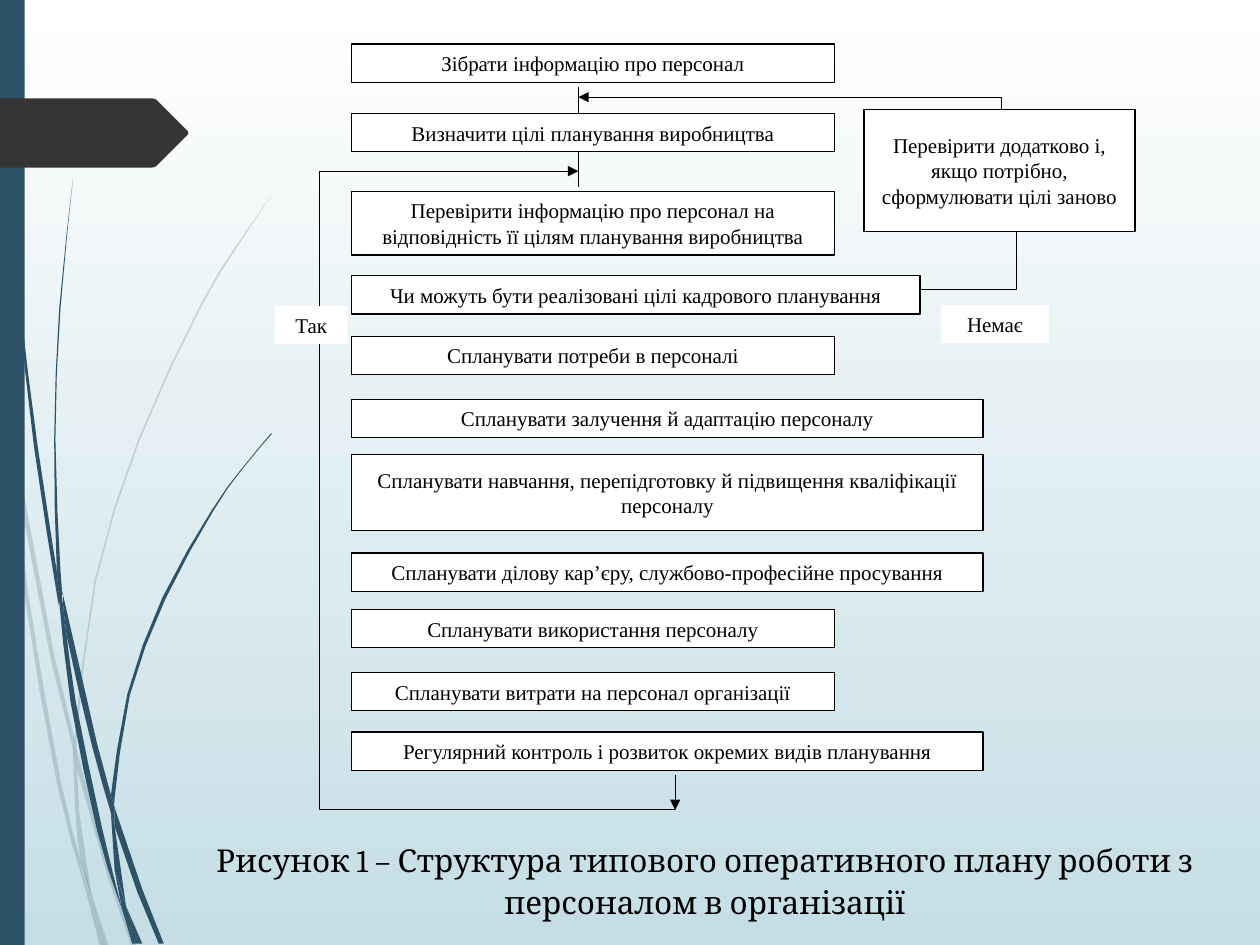
import lxml.etree
import pptx
import pptx.dml.color
import pptx.enum.shapes
import pptx.enum.text
import pptx.oxml.ns
import pptx.util

Cm = pptx.util.Cm
Pt = pptx.util.Pt
RGBColor = pptx.dml.color.RGBColor
qn = pptx.oxml.ns.qn
SHAPE = pptx.enum.shapes.MSO_SHAPE
CONNECTOR = pptx.enum.shapes.MSO_CONNECTOR

WHITE = RGBColor(0xFF, 0xFF, 0xFF)
BLACK = RGBColor(0x00, 0x00, 0x00)
PALE_BLUE = RGBColor(0xC5, 0xDE, 0xE5)
DARK_BLUE = RGBColor(0x2E, 0x53, 0x69)
CHARCOAL = RGBColor(0x35, 0x35, 0x35)

# Outlines are drawn on a grid of 1000 x 750 units over the slide
GRID_UNIT = Cm(25.4) / 1000
FINE = 100  # the outline builder keeps whole numbers only

# Each wisp piece: its outer edge, then its inner edge on the way back
FAINT_WISPS = [
    ([(0, 282), (6, 322), (8, 350)], [(7, 344), (0, 299)]),
    ([(10, 345), (43, 520), (59, 586)], [(59, 599), (40, 522), (12, 376)]),
    ([(61, 596), (64, 607), (88, 692), (108, 750)], [(104, 750), (85, 694), (61, 610)]),
    ([(73, 711), (86, 750)], [(83, 750)]),
    ([(8, 350), (12, 376), (22, 469), (48, 619), (64, 683), (70, 714)],
     [(64, 693), (45, 621), (19, 470), (8, 350)]),
    ([(58, 599), (60, 646), (64, 683), (73, 711)], [(72, 706), (63, 646), (61, 608)]),
    ([(217, 153), (187, 198), (159, 245), (111, 349), (76, 462), (61, 584), (61, 596)],
     [(59, 586), (75, 461), (110, 348), (158, 244), (186, 197), (217, 153)]),
    ([(70, 714), (82, 750)], [(79, 750)]),
    ([(58, 599), (61, 608)], [(61, 596), (59, 586)]),
    ([(65, 683), (73, 711), (83, 750)], [(82, 750), (70, 714)]),
]
STRONG_WISPS = [
    ([(3, 0), (6, 109), (15, 232), (30, 355), (45, 453), (47, 481)],
     [(46, 477), (27, 355), (14, 233), (5, 110), (2, 0)]),
    ([(50, 472), (77, 590), (88, 631)], [(88, 645), (73, 592), (53, 505), (50, 472)]),
    ([(91, 641), (113, 706), (130, 749)], [(126, 749), (109, 708), (91, 656)]),
    ([(47, 477), (53, 505), (60, 556), (81, 657), (97, 722)],
     [(92, 708), (77, 659), (56, 557), (47, 477)]),
    ([(58, 141), (48, 245), (44, 349), (48, 453), (50, 472)],
     [(49, 472), (45, 449), (43, 349), (47, 245), (58, 141)]),
    ([(100, 719), (113, 749)], [(110, 749)]),
    ([(45, 449), (49, 472), (53, 505)], [(47, 477), (45, 453)]),
    ([(216, 344), (191, 374), (169, 406), (131, 476), (103, 552), (91, 633), (91, 641)],
     [(88, 631), (101, 551), (129, 474), (168, 405), (191, 373), (215, 344)]),
    ([(97, 722), (108, 749)], [(105, 749)]),
    ([(88, 645), (91, 656), (100, 719)], [(96, 706), (91, 691)]),
    ([(88, 631), (91, 641), (91, 656)], [(88, 645)]),
    ([(91, 691), (100, 719), (110, 749)], [(108, 749), (97, 722)]),
]
ARROW_TAB = [(0, 78), (121, 78), (124, 79), (149, 104), (149.5, 105.5),
             (149, 107), (124, 132), (121, 133), (0, 133)]

# Planning steps: text, top, width, height in cm within the flowchart
NARROW, MIDDLE, WIDE = 9.73, 11.46, 12.73
STEP_LEFT, ROW = 1.55, 0.77
STEPS = [
    ("Зібрати інформацію про персонал", 0, NARROW, ROW),
    ("Визначити цілі планування виробництва", 1.4, NARROW, ROW),
    ("Перевірити інформацію про персонал на відповідність її цілям планування виробництва",
     2.97, NARROW, 1.28),
    ("Чи можуть бути реалізовані цілі кадрового планування", 4.67, MIDDLE, ROW),
    ("Спланувати потреби в персоналі", 5.89, NARROW, ROW),
    ("Спланувати залучення й адаптацію персоналу", 7.16, WIDE, ROW),
    ("Спланувати навчання, перепідготовку й підвищення кваліфікації персоналу",
     8.28, WIDE, 1.52),
    ("Спланувати ділову кар’єру, службово-професійне просування", 10.26, WIDE, ROW),
    ("Спланувати використання персоналу", 11.4, NARROW, ROW),
    ("Спланувати витрати на персонал організації", 12.67, NARROW, ROW),
    ("Регулярний контроль і розвиток окремих видів планування", 13.87, WIDE, ROW),
]


def format_text(frame, text, font_format, paragraph_format):
    frame.word_wrap = True
    paragraph = frame.paragraphs[0]
    run = paragraph.add_run()
    run.text = text
    run.font.color.rgb = BLACK
    for target, values in ((run.font, font_format), (paragraph, paragraph_format)):
        for name, value in values.items():
            setattr(target, name, value)


def paint(shape, color, line_color=None):
    shape.shadow.inherit = False
    shape.fill.solid()
    shape.fill.fore_color.rgb = color
    if line_color is None:
        shape.line.fill.background()
    else:
        shape.line.color.rgb = line_color
        shape.line.width = Pt(0.75)


def smooth(points):
    """Add the middle point of each span of a long edge, on a Catmull-Rom curve."""
    if len(points) < 4:
        return points
    padded = [points[0], *points, points[-1]]
    curve = [points[0]]
    for a, b, c, d in zip(padded, padded[1:], padded[2:], padded[3:]):
        middle = tuple((9 * (q + r) - p - s) / 16 for p, q, r, s in zip(a, b, c, d))
        curve += [middle, c]
    return curve


def add_outline(shapes, points, color):
    fine_points = [(x * FINE, y * FINE) for x, y in points]
    builder = shapes.build_freeform(*fine_points[0], scale=GRID_UNIT / FINE)
    builder.add_line_segments(fine_points[1:], close=True)
    shape = builder.convert_to_shape()
    paint(shape, color)
    return shape


def add_decoration(slide):
    for wisps, opacity in ((FAINT_WISPS, 20), (STRONG_WISPS, 100)):
        group = slide.shapes.add_group_shape()
        for outer, inner in wisps:
            shape = add_outline(group.shapes, smooth(outer) + smooth(inner), DARK_BLUE)
            if opacity < 100:
                color = shape.element.spPr.find(qn("a:solidFill"))[0]
                lxml.etree.SubElement(color, qn("a:alpha"), val=str(opacity * 1000))
    # Side bar and arrow tab
    bar = slide.shapes.add_shape(SHAPE.RECTANGLE, 0, 0, Cm(0.5), Cm(19.05))
    paint(bar, DARK_BLUE)
    add_outline(slide.shapes, ARROW_TAB, CHARCOAL)


def add_flowchart(slide, left, top):
    def add_box(text, x, y, width, height, line_color=BLACK):
        box = slide.shapes.add_shape(SHAPE.RECTANGLE, Cm(left + x), Cm(top + y),
                                     Cm(width), Cm(height))
        paint(box, WHITE, line_color)
        box.text_frame.vertical_anchor = pptx.enum.text.MSO_ANCHOR.MIDDLE
        format_text(box.text_frame, text, {"name": "Times New Roman", "size": Pt(12)},
                    {"alignment": pptx.enum.text.PP_ALIGN.CENTER})

    def add_line(x1, y1, x2, y2, bend=None, arrow=False):
        """Draw a line; bend is the percentage of the width where it turns."""
        kind = CONNECTOR.STRAIGHT if bend is None else CONNECTOR.ELBOW
        connector = slide.shapes.add_connector(
            kind, Cm(left + x1), Cm(top + y1), Cm(left + x2), Cm(top + y2))
        connector.line.color.rgb = BLACK
        connector.line.width = Pt(0.5)
        properties = connector.element.spPr
        if bend is not None:
            adjustments = properties.find(qn("a:prstGeom")).get_or_add_avLst()
            lxml.etree.SubElement(adjustments, qn("a:gd"), name="adj1",
                                  fmla=f"val {bend * 1000}")
        if arrow:
            lxml.etree.SubElement(properties.find(qn("a:ln")), qn("a:tailEnd"), type="triangle")
        lxml.etree.SubElement(properties, qn("a:effectLst"))

    # Return loop and stem behind the boxes
    add_line(8.07, 15.42, 0.91, 2.56, bend=100)
    add_line(6.12, 0.86, 6.12, 2.87)
    # Steps, side box and answers
    for text, y, width, height in STEPS:
        add_box(text, STEP_LEFT, y, width, height)
    add_box("Перевірити додатково і, якщо потрібно, сформулювати цілі заново",
            11.88, 1.32, 5.46, 2.46)
    add_box("Немає", 13.43, 5.26, 2.18, ROW, line_color=None)
    add_box("Так", 0, 5.28, 1.47, ROW, line_color=None)
    # Links and arrows
    add_line(14.65, 1.32, 6.12, 1.07, bend=0, arrow=True)
    add_line(13, 4.95, 14.96, 3.78, bend=100)
    add_line(8.07, 14.73, 8.07, 15.44, arrow=True)
    add_line(0.91, 2.56, 6.12, 2.56, arrow=True)


def add_caption(slide, left, top, width, height):
    caption = slide.shapes.add_textbox(Cm(left), Cm(top), Cm(width), Cm(height))
    format_text(caption.text_frame,
                "Рисунок 1 – Структура типового оперативного плану роботи з персоналом в організації",
                {"name": "Cambria", "size": Pt(18)},
                {"alignment": pptx.enum.text.PP_ALIGN.CENTER, "line_spacing": Pt(24)})


def main():
    presentation = pptx.Presentation()
    presentation.slide_width, presentation.slide_height = Cm(25.4), Cm(19.05)
    slide = presentation.slides.add_slide(presentation.slide_layouts[6])
    # Background running from white down to pale blue
    fill = slide.background.fill
    fill.gradient()
    fill.gradient_angle = 270
    for stop, color in zip(fill.gradient_stops, (WHITE, PALE_BLUE)):
        stop.color.rgb = color
    add_decoration(slide)
    add_flowchart(slide, 5.54, 0.89)
    add_caption(slide, 3.02, 16.74, 22.38, 2.31)
    presentation.save("out.pptx")


if __name__ == "__main__":
    main()
